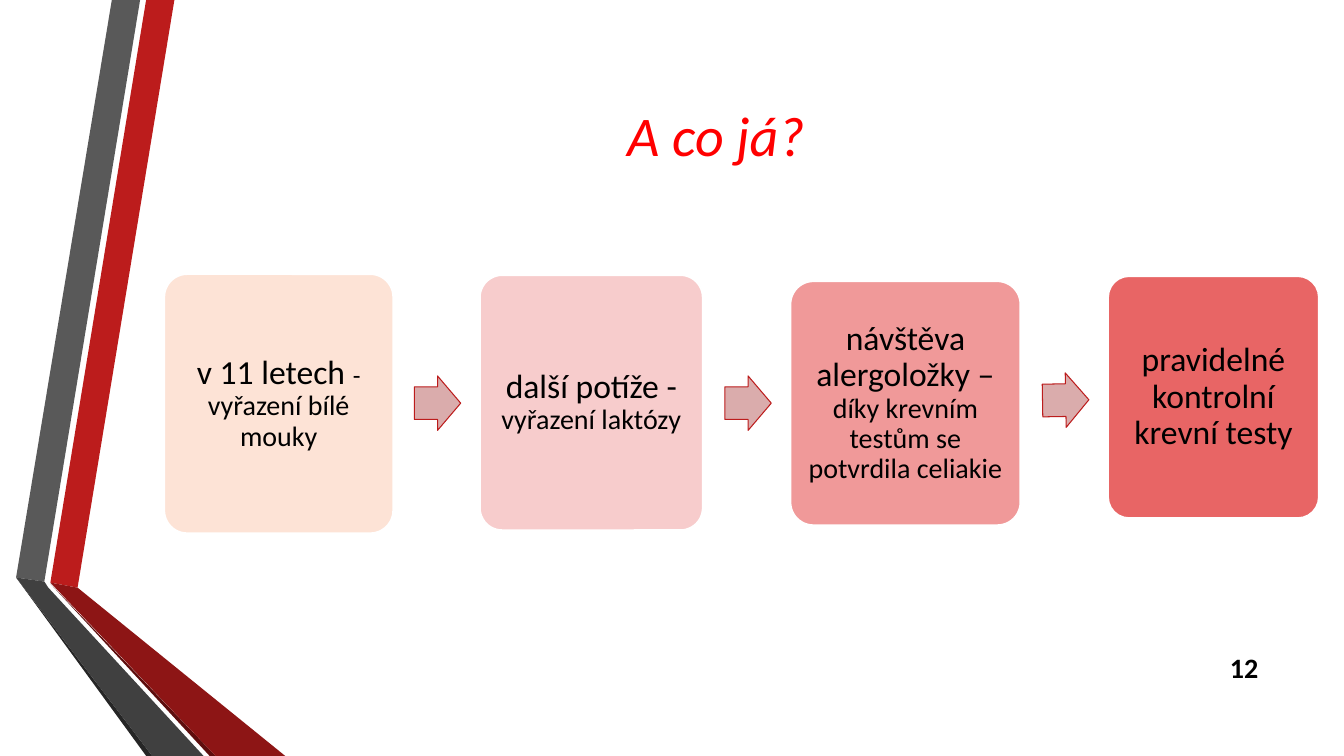
from pptx import Presentation
from pptx.dml.color import RGBColor
from pptx.enum.shapes import MSO_SHAPE as Shape
from pptx.enum.text import MSO_ANCHOR as Anchor, PP_ALIGN as Align
from pptx.util import Inches, Pt

FONT = "Calibri"

# Side ribbon: fill and outline corners in inches
RIBBON = [
    ("BC1C1C", [(0.5, 5.78), (0.77, 5.83), (1.73, 0), (1.45, 0)]),
    ("595959", [(1.39, 0), (1.11, 0), (0.16, 5.73), (0.44, 5.77)]),
    ("262626", [(0.16, 5.73), (1.45, 7.5), (1.51, 7.5)]),
    ("5E0E0E", [(0.5, 5.79), (2.08, 7.5), (2.14, 7.5)]),
    ("8D1515", [(0.5, 5.78), (2.14, 7.5), (2.83, 7.5), (0.77, 5.83)]),
    ("404040", [(2.02, 7.5), (0.48, 5.83), (0.44, 5.77), (0.16, 5.73), (1.51, 7.5)]),
]

# Steps: left, top, width, height, fill, text spans with sizes
STEPS = [
    (1.63, 2.72, 2.27, 2.57, "FDE3D6",
     [("v 11 letech ", 24), ("- ", 18), ("vyřazení bílé mouky", 20)]),
    (4.76, 2.73, 2.21, 2.53, "F7CCCC",
     [("další potíže - ", 24), ("vyřazení laktózy", 20)]),
    (7.84, 2.79, 2.28, 2.42, "F09999",
     [("návštěva alergoložky – ", 24),
      ("díky krevním testům se potvrdila celiakie", 20)]),
    (10.99, 2.74, 2.09, 2.4, "E86565",
     [("pravidelné kontrolní krevní testy", 24)]),
]

# Arrows between steps: left, top, rotation
ARROWS = [(4.11, 3.73, 0), (7.19, 3.73, 0), (10.34, 3.7, 359)]


def color(code):
    return RGBColor.from_string(code)


def paint(shape, fill, line=None, width=0):
    shape.shadow.inherit = False
    shape.fill.solid()
    shape.fill.fore_color.rgb = color(fill)
    if line:
        shape.line.color.rgb = color(line)
        shape.line.width = Pt(width)
    else:
        shape.line.fill.background()


def place(shape, left, top, width, height):
    shape.left, shape.top = Inches(left), Inches(top)
    shape.width, shape.height = Inches(width), Inches(height)


def style(para, size, code, align, bold=False, italic=False):
    para.alignment = align
    font = para.font
    font.name, font.size = FONT, Pt(size)
    font.bold, font.italic = bold, italic
    font.color.rgb = color(code)


def add_ribbon_part(page, fill, corners):
    points = [(Inches(x), Inches(y)) for x, y in corners]
    builder = page.shapes.build_freeform(*points[0])
    builder.add_line_segments(points[1:], close=True)
    paint(builder.convert_to_shape(), fill)


def add_title(page, text):
    title = page.shapes.title
    place(title, 1.62, 0.75, 10.96, 1.17)
    title.text_frame.text = text
    title.text_frame.vertical_anchor = Anchor.MIDDLE
    style(title.text_frame.paragraphs[0], 40, "FF0000", Align.CENTER, italic=True)


def add_page_number(page, number):
    box = page.shapes.add_textbox(Inches(11.98), Inches(6.42), Inches(0.6), Inches(0.4))
    frame = box.text_frame
    frame.word_wrap = True
    frame.vertical_anchor = Anchor.MIDDLE
    frame.text = number
    style(frame.paragraphs[0], 20, "000000", Align.RIGHT, bold=True)


def add_step(page, left, top, width, height, fill, spans):
    box = page.shapes.add_shape(Shape.ROUNDED_RECTANGLE, Inches(left), Inches(top),
                                Inches(width), Inches(height))
    box.adjustments[0] = 0.1
    paint(box, fill, "FFFFFF", 1.25)
    frame = box.text_frame
    frame.word_wrap = True
    frame.vertical_anchor = Anchor.MIDDLE
    frame.margin_left = frame.margin_right = Inches(0.1)
    frame.margin_top = frame.margin_bottom = Inches(0.1)
    para = frame.paragraphs[0]
    style(para, 24, "000000", Align.CENTER)
    para.line_spacing = 0.9
    for text, size in spans:
        span = para.add_run()
        span.text = text
        span.font.size = Pt(size)


def add_arrow(page, left, top, rotation):
    arrow = page.shapes.add_shape(Shape.RIGHT_ARROW, Inches(left), Inches(top),
                                  Inches(0.46), Inches(0.54))
    arrow.adjustments[0], arrow.adjustments[1] = 0.6, 0.5
    arrow.rotation = rotation
    paint(arrow, "DAACAC", "BC1C1C", 0.75)


def main():
    deck = Presentation()
    deck.slide_width, deck.slide_height = Inches(13.33), Inches(7.5)
    page = deck.slides.add_slide(deck.slide_layouts[5])

    for part in RIBBON:
        add_ribbon_part(page, *part)
    add_title(page, "A co já?")
    add_page_number(page, "12")

    # Process from first symptoms to regular checks
    for step in STEPS:
        add_step(page, *step)
    for arrow in ARROWS:
        add_arrow(page, *arrow)

    deck.save("out.pptx")


if __name__ == "__main__":
    main()
